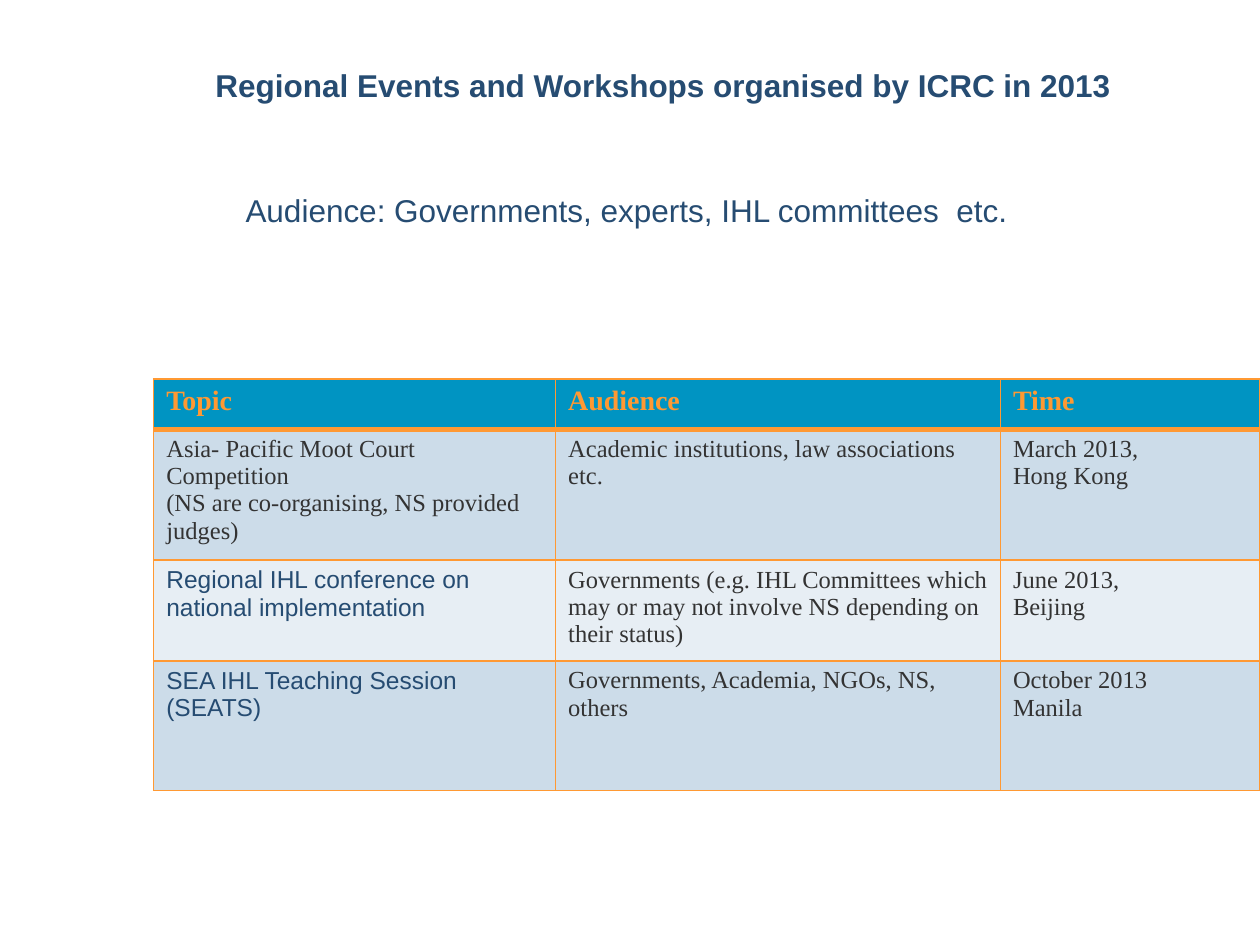
from dataclasses import dataclass

from lxml.etree import SubElement
from pptx import Presentation
from pptx.dml.color import RGBColor
from pptx.enum.text import MSO_ANCHOR, MSO_AUTO_SIZE, PP_ALIGN
from pptx.oxml.ns import qn
from pptx.util import Inches, Pt


@dataclass(frozen=True)
class TextStyle:
    font: str
    size: int
    color: str
    bold: bool = False


@dataclass(frozen=True)
class Theme:
    title: TextStyle = TextStyle("Arial", 18, "264C72", True)
    subtitle: TextStyle = TextStyle("Arial", 18, "264C72")
    header: TextStyle = TextStyle("Times New Roman", 16, "FF9933", True)
    body: TextStyle = TextStyle("Times New Roman", 14, "333333")
    topic: TextStyle = TextStyle("Arial", 14, "264C72")
    header_fill: str = "0094C2"
    band_fills: tuple[str, str] = ("CCDCE9", "E7EEF4")
    border: str = "FF9933"
    border_width: int = 1
    rule_width: int = 3


@dataclass(frozen=True)
class Event:
    topic: tuple[str, ...]
    audience: str
    time: tuple[str, ...]
    topic_style: TextStyle


THEME = Theme()
COLUMN_WIDTHS = (3.19, 3.53, 2.06)
ROW_HEIGHTS = (0.4, 1.03, 0.8, 1.03)
HEADINGS = ("Topic", "Audience", "Time")
EVENTS = (
    Event(
        ("Asia- Pacific Moot Court Competition",
         "(NS are co-organising, NS provided judges)"),
        "Academic institutions, law associations etc.",
        ("March 2013,", "Hong Kong"),
        THEME.body,
    ),
    Event(
        ("Regional IHL conference on national implementation",),
        "Governments (e.g. IHL Committees which may or may not involve NS "
        "depending on their status)",
        ("June 2013,", "Beijing"),
        THEME.topic,
    ),
    Event(
        ("SEA IHL Teaching Session (SEATS)",),
        "Governments, Academia, NGOs, NS, others",
        ("October 2013", "Manila"),
        THEME.topic,
    ),
)


def write(frame, lines: tuple[str, ...], style: TextStyle) -> None:
    frame.word_wrap = True
    for index, line in enumerate(lines):
        paragraph = frame.add_paragraph() if index else frame.paragraphs[0]
        paragraph.alignment = PP_ALIGN.LEFT
        run = paragraph.add_run()
        run.text = line
        run.font.name = style.font
        run.font.size = Pt(style.size)
        run.font.bold = style.bold
        run.font.color.rgb = RGBColor.from_string(style.color)


def write_heading(shape, line: str, style: TextStyle) -> None:
    write(shape.text_frame, (line,), style)
    shape.text_frame.auto_size = MSO_AUTO_SIZE.SHAPE_TO_FIT_TEXT
    shape.text_frame.vertical_anchor = MSO_ANCHOR.TOP


def add_borders(cell, top: int, bottom: int) -> None:
    properties = cell._tc.get_or_add_tcPr()
    side = THEME.border_width
    edges = (("a:lnL", side), ("a:lnR", side), ("a:lnT", top), ("a:lnB", bottom))
    for position, (tag, width) in enumerate(edges):
        edge = SubElement(properties, qn(tag), w=str(Pt(width)))
        fill = SubElement(edge, qn("a:solidFill"))
        SubElement(fill, qn("a:srgbClr"), val=THEME.border)
        properties.insert(position, edge)


def fill_cell(cell, lines: tuple[str, ...], style: TextStyle, row: int) -> None:
    color = THEME.band_fills[(row - 1) % 2] if row else THEME.header_fill
    cell.fill.solid()
    cell.fill.fore_color.rgb = RGBColor.from_string(color)
    add_borders(
        cell,
        top=THEME.rule_width if row == 1 else THEME.border_width,
        bottom=THEME.rule_width if row == 0 else THEME.border_width,
    )
    write(cell.text_frame, lines, style)


def add_schedule(slide) -> None:
    schedule = slide.shapes.add_table(
        len(ROW_HEIGHTS), len(COLUMN_WIDTHS), Inches(1.22), Inches(3.01),
        Inches(sum(COLUMN_WIDTHS)), Inches(sum(ROW_HEIGHTS)),
    ).table
    schedule.horz_banding = False
    for column, width in zip(schedule.columns, COLUMN_WIDTHS):
        column.width = Inches(width)
    for row, height in zip(schedule.rows, ROW_HEIGHTS):
        row.height = Inches(height)
    for column, heading in enumerate(HEADINGS):
        fill_cell(schedule.cell(0, column), (heading,), THEME.header, 0)
    for row, event in enumerate(EVENTS, start=1):
        fill_cell(schedule.cell(row, 0), event.topic, event.topic_style, row)
        fill_cell(schedule.cell(row, 1), (event.audience,), THEME.body, row)
        fill_cell(schedule.cell(row, 2), event.time, THEME.body, row)


def main() -> None:
    deck = Presentation()
    deck.slide_width, deck.slide_height = Inches(10), Inches(7.5)
    slide = deck.slides.add_slide(deck.slide_layouts[5])

    title = slide.shapes.title
    title.left, title.top = Inches(1.61), Inches(0.47)
    title.width, title.height = Inches(8.11), Inches(0.4)
    write_heading(title, "Regional Events and Workshops organised by ICRC in 2013", THEME.title)

    add_schedule(slide)

    subtitle = slide.shapes.add_textbox(
        Inches(1.85), Inches(1.47), Inches(7.32), Inches(0.4))
    write_heading(subtitle, "Audience: Governments, experts, IHL committees  etc.", THEME.subtitle)

    deck.save("out.pptx")


if __name__ == "__main__":
    main()
